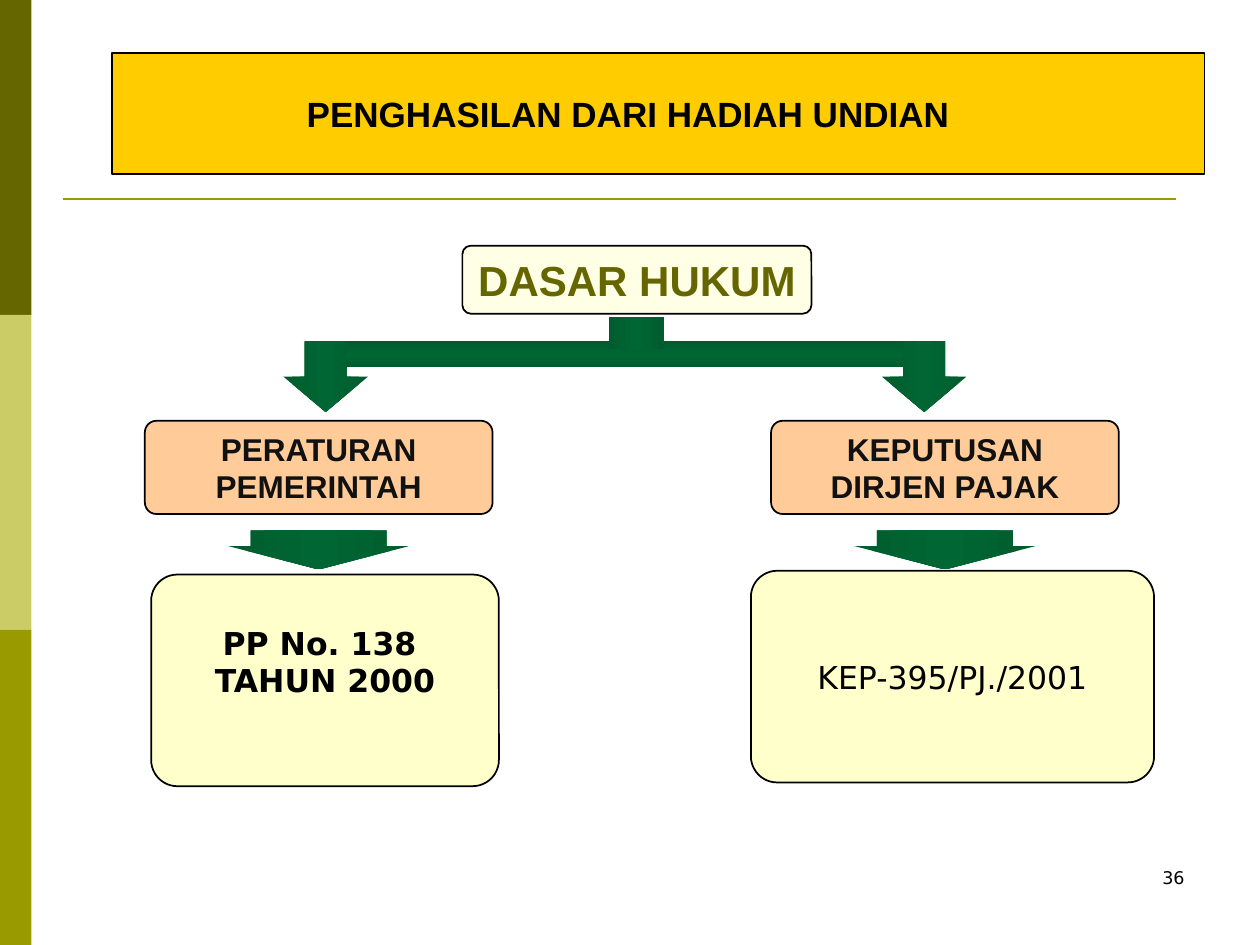
import copy
from dataclasses import dataclass

import lxml.etree
import pptx
import pptx.dml.color
import pptx.enum.shapes
import pptx.enum.text
import pptx.oxml.ns
import pptx.util

SHAPE = pptx.enum.shapes.MSO_SHAPE
ALIGN = pptx.enum.text.PP_ALIGN
ANCHOR = pptx.enum.text.MSO_ANCHOR
qn = pptx.oxml.ns.qn


@dataclass(frozen=True)
class Theme:
    black: str = "000000"
    ink: str = "111111"
    olive: str = "666600"
    lime: str = "CCCC66"
    moss: str = "999900"
    gold: str = "FFCC00"
    ivory: str = "FFFFE5"
    peach: str = "FFCC99"
    cream: str = "FFFFCC"
    green_stops: tuple = ((0, "005C2E"), (0.5, "006633"), (1, "005C2E"))
    sans: str = "Arial"
    plain: str = "DejaVu Sans"
    heading: int = 24
    title: int = 20
    body: int = 18
    small: int = 10
    outline: float = 1
    rule: float = 1.5


def color(value):
    return pptx.dml.color.RGBColor.from_string(value)


def apply(target, values):
    for name, value in values.items():
        setattr(target, name, value)


class Page:
    """Draws styled elements on one slide, with lengths in percent of its size."""

    def __init__(self, deck, theme):
        self.deck, self.theme = deck, theme
        self.slide = deck.slides.add_slide(deck.slide_layouts[5])

    def place(self, left, top, width, height):
        across, down = self.deck.slide_width / 100, self.deck.slide_height / 100
        return [round(v) for v in (left * across, top * down, width * across, height * down)]

    def set_text(self, shape, lines, size, ink, font, bold=True, align=ALIGN.CENTER,
                 anchor=ANCHOR.MIDDLE, right=0.1, bottom=0.05):
        frame = shape.text_frame
        apply(frame, {
            "word_wrap": True, "auto_size": pptx.enum.text.MSO_AUTO_SIZE.NONE,
            "vertical_anchor": anchor,
            "margin_left": pptx.util.Inches(0.1), "margin_right": pptx.util.Inches(right),
            "margin_top": pptx.util.Inches(0.05), "margin_bottom": pptx.util.Inches(bottom)})
        frame.text = "\n".join(lines)
        for para in frame.paragraphs:
            para.alignment = align
            for span in para.runs:
                apply(span.font, {"size": pptx.util.Pt(size), "name": font, "bold": bold})
                span.font.color.rgb = color(ink)

    def paint(self, shape, fill, outlined):
        shape.fill.solid()
        shape.fill.fore_color.rgb = color(fill)
        if outlined:
            shape.line.color.rgb = color(self.theme.black)
            shape.line.width = pptx.util.Pt(self.theme.outline)
        else:
            shape.line.fill.background()

    def title(self, area, lines, **text):
        box = self.slide.shapes.title
        apply(box, dict(zip(("left", "top", "width", "height"), self.place(*area))))
        outline = lxml.etree.SubElement(box.element.spPr, qn("a:prstGeom"), prst="roundRect")
        guides = lxml.etree.SubElement(outline, qn("a:avLst"))
        lxml.etree.SubElement(guides, qn("a:gd"), name="adj", fmla="val 2600")
        self.paint(box, self.theme.gold, True)
        self.set_text(box, lines, **text)

    def shape(self, kind, area, adjust=()):
        shape = self.slide.shapes.add_shape(kind, *self.place(*area))
        shape.shadow.inherit = False
        for index, value in enumerate(adjust):
            shape.adjustments[index] = value
        return shape

    def band(self, area, fill):
        self.paint(self.shape(SHAPE.RECTANGLE, area), fill, False)

    def card(self, area, fill, lines, **text):
        box = self.shape(SHAPE.ROUNDED_RECTANGLE, area, (0.124,))
        self.paint(box, fill, True)
        self.set_text(box, lines, **text)

    def green(self, kind, area, adjust=(), angle=0):
        shape = self.shape(kind, area, adjust)
        shape.line.fill.background()
        shape.fill.gradient()
        shape.fill.gradient_angle = angle
        stops = shape.element.spPr.find(qn("a:gradFill")).find(qn("a:gsLst"))
        stops.insert(1, copy.deepcopy(stops[0]))
        for stop, (position, value) in zip(shape.fill.gradient_stops, self.theme.green_stops):
            stop.position = position
            stop.color.rgb = color(value)

    def rule(self, left, right, top):
        x, y, width, _ = self.place(left, top, right - left, 0)
        line = self.slide.shapes.add_connector(
            pptx.enum.shapes.MSO_CONNECTOR.STRAIGHT, x, y, x + width, y)
        line.line.color.rgb = color(self.theme.moss)
        line.line.width = pptx.util.Pt(self.theme.rule)
        lxml.etree.SubElement(line.element.spPr, qn("a:effectLst"))

    def label(self, area, lines, **text):
        self.set_text(self.slide.shapes.add_textbox(*self.place(*area)), lines, **text)


def main():
    deck = pptx.Presentation()
    apply(deck, {"slide_width": pptx.util.Inches(10), "slide_height": pptx.util.Inches(7.5)})
    theme = Theme()
    page = Page(deck, theme)

    for index, fill in enumerate((theme.olive, theme.lime, theme.moss)):
        page.band((0, index * 100 / 3, 2.5, 100 / 3), fill)
    page.rule(5, 93.3, 21.07)
    page.title((8.9, 5.6, 86.7, 12.8), ["PENGHASILAN DARI HADIAH UNDIAN"],
               size=theme.title, ink=theme.black, font=theme.sans, right=0.58)
    page.label((71.7, 91.07, 23.3, 6.67), ["36"], size=theme.small, ink=theme.black,
               font=theme.plain, bold=False, align=ALIGN.RIGHT, anchor=ANCHOR.TOP)

    page.card((36.7, 26, 27.7, 7.2), theme.ivory, ["DASAR HUKUM"],
              size=theme.heading, ink=theme.olive, font=theme.sans)
    page.green(SHAPE.RECTANGLE, (24.2, 36.13, 50.8, 2.67), angle=90)
    for left in (22.5, 70):
        page.green(SHAPE.DOWN_ARROW, (left, 36.13, 6.7, 7.47), (0.5, 0.5))
    page.green(SHAPE.RECTANGLE, (48.3, 33.6, 4.4, 3.33))

    for left, lines in ((11.5, ["PERATURAN", "PEMERINTAH"]),
                        (61.2, ["KEPUTUSAN", "DIRJEN PAJAK"])):
        page.card((left, 44.53, 27.6, 9.87), theme.peach, lines,
                  size=theme.body, ink=theme.ink, font=theme.sans)
        page.green(SHAPE.DOWN_ARROW, (left + 6.6, 56.13, 14.4, 4.13), (0.75, 0.6))

    detail = {"size": theme.body, "ink": theme.black, "font": theme.plain}
    page.card((12, 60.8, 27.6, 22.4), theme.cream, ["PP No. 138 ", "TAHUN 2000"],
              bottom=0.35, **detail)
    page.card((59.6, 60.4, 32, 22.4), theme.cream, ["KEP-395/PJ./2001"], bold=False, **detail)

    deck.save("out.pptx")


if __name__ == "__main__":
    main()
